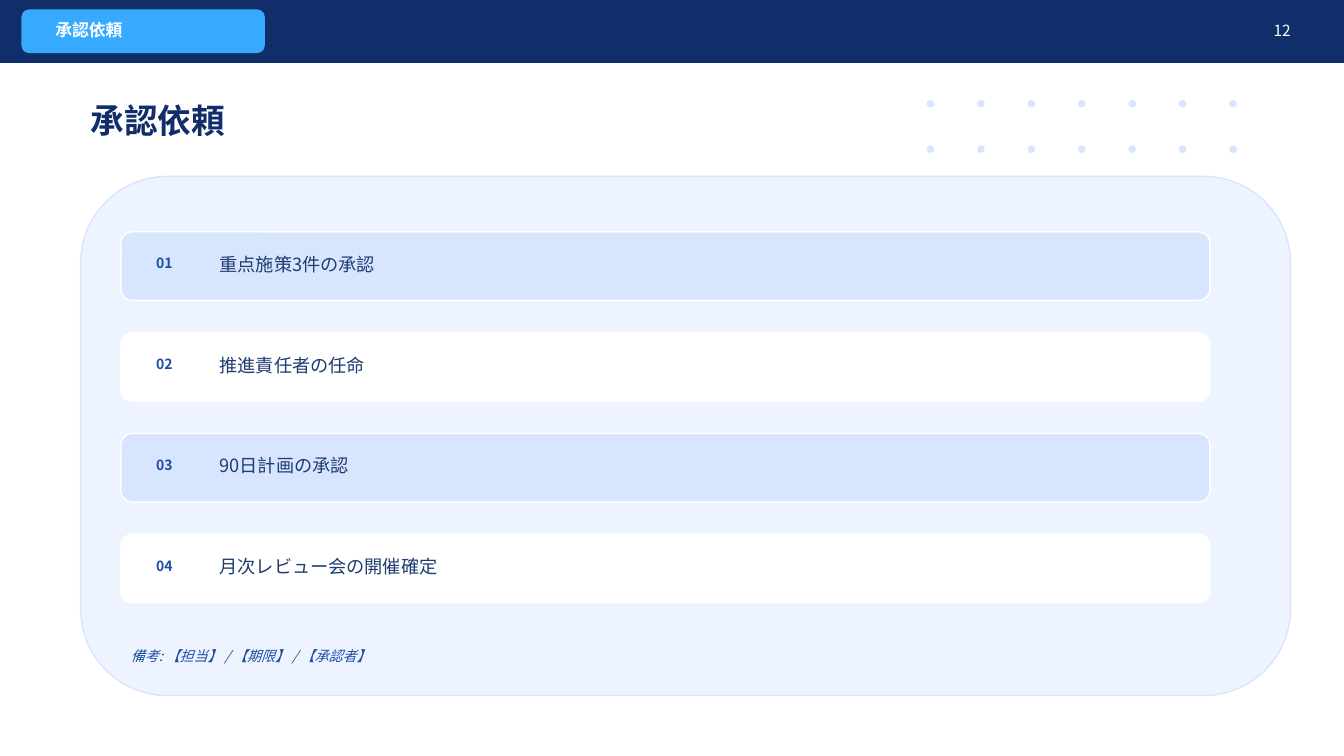
"""Build the approval request slide."""
from lxml.etree import SubElement
from pptx import Presentation
from pptx.dml.color import RGBColor
from pptx.enum.shapes import MSO_SHAPE
from pptx.enum.text import MSO_ANCHOR, PP_ALIGN
from pptx.oxml.ns import qn
from pptx.util import Inches, Pt

NAVY, BLUE, INK = "112E6A", "1D4EA3", "1F3C70"
SKY, PALE, MIST, WHITE = "37A9FF", "D8E5FF", "EEF4FF", "FFFFFF"
BODY_FONT, TITLE_FONT = "Noto Sans CJK JP", "Lato"


def color(hex_code):
    return RGBColor.from_string(hex_code)


class ApprovalSlide:
    def __init__(self, slide):
        self.slide = slide

    def shape(self, preset, left, top, width, height, fill, line=None):
        block = self.slide.shapes.add_shape(
            preset, Inches(left), Inches(top), Inches(width), Inches(height))
        block.shadow.inherit = False
        block.fill.solid()
        block.fill.fore_color.rgb = color(fill)
        block.line.color.rgb = color(line or fill)
        block.line.width = Pt(1)

    def text(self, words, left, top, width, height, size, ink,
             bold=False, italic=False, align=PP_ALIGN.LEFT, font=BODY_FONT):
        frame = self.slide.shapes.add_textbox(
            Inches(left), Inches(top), Inches(width), Inches(height)).text_frame
        frame.word_wrap = True
        frame.vertical_anchor = MSO_ANCHOR.MIDDLE
        frame.text = words
        paragraph = frame.paragraphs[0]
        paragraph.alignment = align
        for run in paragraph.runs:
            run.font.size = Pt(size)
            run.font.bold = bold
            run.font.italic = italic
            run.font.color.rgb = color(ink)
            run.font.name = font
            SubElement(run.font._element, qn("a:ea"), typeface=BODY_FONT)

    def dots(self, left, top, columns, rows):
        for row in range(rows):
            for column in range(columns):
                self.shape(MSO_SHAPE.OVAL, left + 0.5 * column, top + 0.45 * row,
                           0.06, 0.06, PALE)

    def header(self, section, page):
        self.shape(MSO_SHAPE.RECTANGLE, 0, 0, 13.33, 0.62, NAVY)
        self.shape(MSO_SHAPE.ROUNDED_RECTANGLE, 0.22, 0.1, 2.4, 0.42, SKY)
        self.text(section, 0.45, 0.18, 8.8, 0.24, 12, WHITE, bold=True)
        self.text(page, 12.15, 0.18, 0.75, 0.24, 11, WHITE, align=PP_ALIGN.RIGHT)

    def request(self, index, words):
        top = 2.3 + index
        fill = WHITE if index % 2 else PALE
        self.shape(MSO_SHAPE.ROUNDED_RECTANGLE, 1.2, top, 10.8, 0.68, fill, WHITE)
        self.text(f"{index + 1:02}", 1.45, top + 0.21, 0.44, 0.2, 10, BLUE, bold=True)
        self.text(words, 2.08, top + 0.2, 9.6, 0.24, 13, INK)


def main():
    deck = Presentation()
    deck.slide_width, deck.slide_height = Inches(13.33), Inches(7.5)
    page = ApprovalSlide(deck.slides.add_slide(deck.slide_layouts[6]))

    page.dots(9.2, 1, columns=7, rows=2)
    page.header("承認依頼", "12")
    page.text("承認依頼", 0.8, 0.95, 11.4, 0.48, 24, NAVY, bold=True, font=TITLE_FONT)
    page.shape(MSO_SHAPE.ROUNDED_RECTANGLE, 0.8, 1.75, 12, 5.15, MIST, PALE)
    requests = ["重点施策3件の承認", "推進責任者の任命",
                "90日計画の承認", "月次レビュー会の開催確定"]
    for index, words in enumerate(requests):
        page.request(index, words)
    page.text("備考: 【担当】 / 【期限】 / 【承認者】", 1.2, 6.4, 6.8, 0.22, 10, BLUE,
              italic=True)

    deck.save("out.pptx")


if __name__ == "__main__":
    main()
